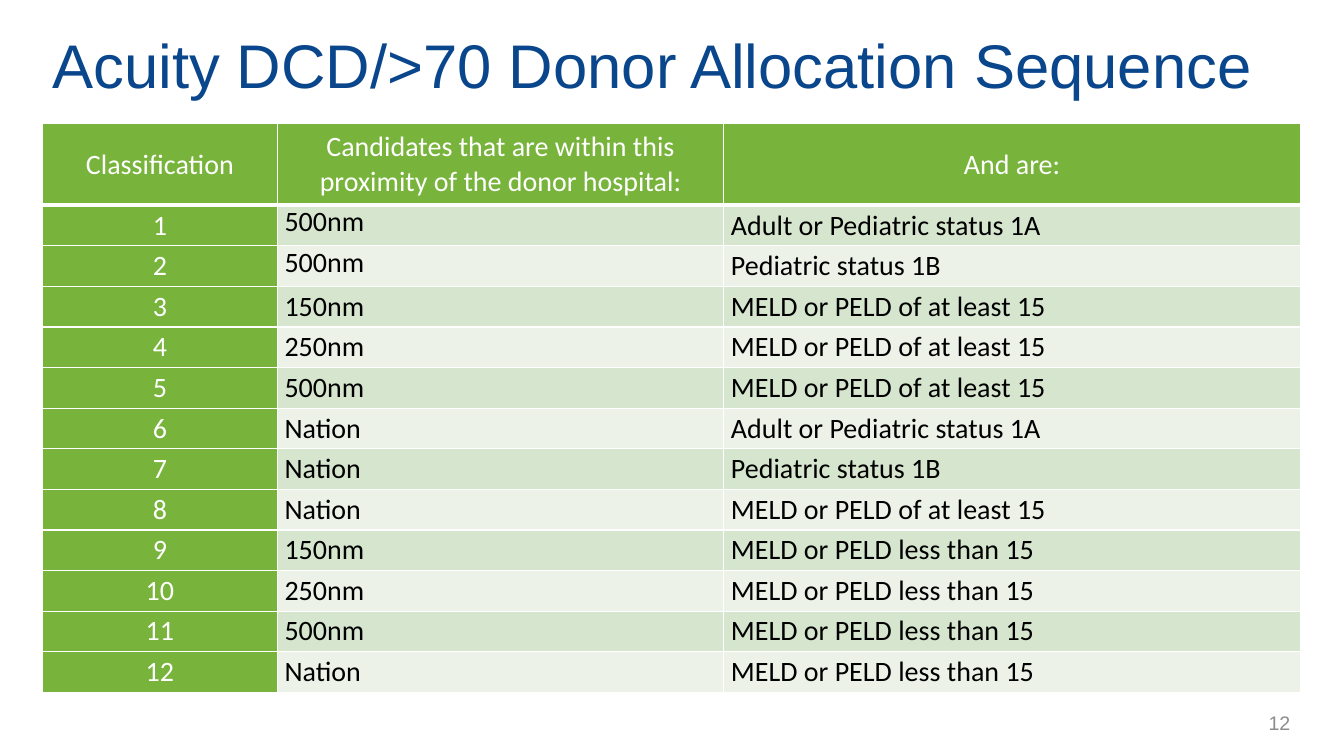
"""Build the donor allocation sequence slide."""
from lxml import etree
from pptx import Presentation
from pptx.dml.color import RGBColor
from pptx.enum.text import MSO_ANCHOR, PP_ALIGN
from pptx.oxml.ns import qn
from pptx.util import Cm, Pt

TITLE = "Acuity DCD/>70 Donor Allocation Sequence"
PAGE = "12"
HEAD = (
    "Classification",
    "Candidates that are within this proximity of the donor hospital:",
    "And are:",
)
ADULT = "Adult or Pediatric status 1A"
CHILD = "Pediatric status 1B"
HIGH = "MELD or PELD of at least 15"
LOW = "MELD or PELD less than 15"
STEPS = [
    ("500nm", ADULT),
    ("500nm", CHILD),
    ("150nm", HIGH),
    ("250nm", HIGH),
    ("500nm", HIGH),
    ("Nation", ADULT),
    ("Nation", CHILD),
    ("Nation", HIGH),
    ("150nm", LOW),
    ("250nm", LOW),
    ("500nm", LOW),
    ("Nation", LOW),
]
TOP_ROWS = (1, 2)

WIDTHS = (5.92, 11.25, 14.53)
LEFT, TOP, TALL, HEAD_TALL = 1.07, 3.12, 14.33, 2.05

WHITE = RGBColor(0xFF, 0xFF, 0xFF)
BLACK = RGBColor(0, 0, 0)
BLUE = RGBColor(0x0A, 0x46, 0x8C)
GRAY = RGBColor(0x8C, 0x8C, 0x8C)
GREEN = RGBColor(0x78, 0xB4, 0x3C)
BANDS = (RGBColor(0xEC, 0xF2, 0xE8), RGBColor(0xD6, 0xE5, 0xCE))

START, MID, END = PP_ALIGN.LEFT, PP_ALIGN.CENTER, PP_ALIGN.RIGHT
UPPER, CENTER = MSO_ANCHOR.TOP, MSO_ANCHOR.MIDDLE


def put(frame, text, size=20, font="Calibri", color=BLACK, align=START):
    frame.word_wrap = True
    para = frame.paragraphs[0]
    para.alignment = align
    run = para.add_run()
    run.text = text
    run.font.size = Pt(size)
    run.font.name = font
    run.font.color.rgb = color


def add_box(slide, area, text, **style):
    box = slide.shapes.add_textbox(*(Cm(n) for n in area))
    box.text_frame.vertical_anchor = CENTER
    put(box.text_frame, text, font="Arial", **style)


def edge(cell, base):
    props = cell._tc.get_or_add_tcPr()
    sides = (("L", 1), ("R", 1), ("T", 1), ("B", base))
    for spot, (side, width) in enumerate(sides):
        line = etree.Element(qn("a:ln" + side), w=str(Pt(width)))
        fill = etree.SubElement(line, qn("a:solidFill"))
        etree.SubElement(fill, qn("a:srgbClr"), val=str(WHITE))
        props.insert(spot, line)


def add_grid(slide):
    rows = [HEAD] + [(str(n), *step) for n, step in enumerate(STEPS, 1)]
    area = (LEFT, TOP, sum(WIDTHS), TALL)
    grid = slide.shapes.add_table(
        len(rows), len(HEAD), *(Cm(n) for n in area)).table
    for col, width in zip(grid.columns, WIDTHS):
        col.width = Cm(width)
    step_tall = (TALL - HEAD_TALL) / len(STEPS)
    for r, row in enumerate(rows):
        grid.rows[r].height = Cm(step_tall if r else HEAD_TALL)
        for c, text in enumerate(row):
            cell = grid.cell(r, c)
            label = r == 0 or c == 0
            cell.margin_left = cell.margin_right = Cm(0.18)
            cell.margin_top = cell.margin_bottom = 0
            high = c == 1 and r in TOP_ROWS
            cell.vertical_anchor = UPPER if high else CENTER
            cell.fill.solid()
            cell.fill.fore_color.rgb = GREEN if label else BANDS[r % 2]
            edge(cell, 1 if r else 3)
            put(cell.text_frame, text, color=WHITE if label else BLACK,
                align=MID if label else START)


def main():
    deck = Presentation()
    deck.slide_width, deck.slide_height = Cm(33.87), Cm(19.05)
    slide = deck.slides.add_slide(deck.slide_layouts[6])
    add_grid(slide)
    add_box(slide, (LEFT, 0.43, 32.8, 2.36), TITLE, size=44, color=BLUE)
    add_box(slide, (27.03, 17.7, 5.74, 1.02), PAGE, size=14, color=GRAY,
            align=END)
    deck.save("out.pptx")


if __name__ == "__main__":
    main()
